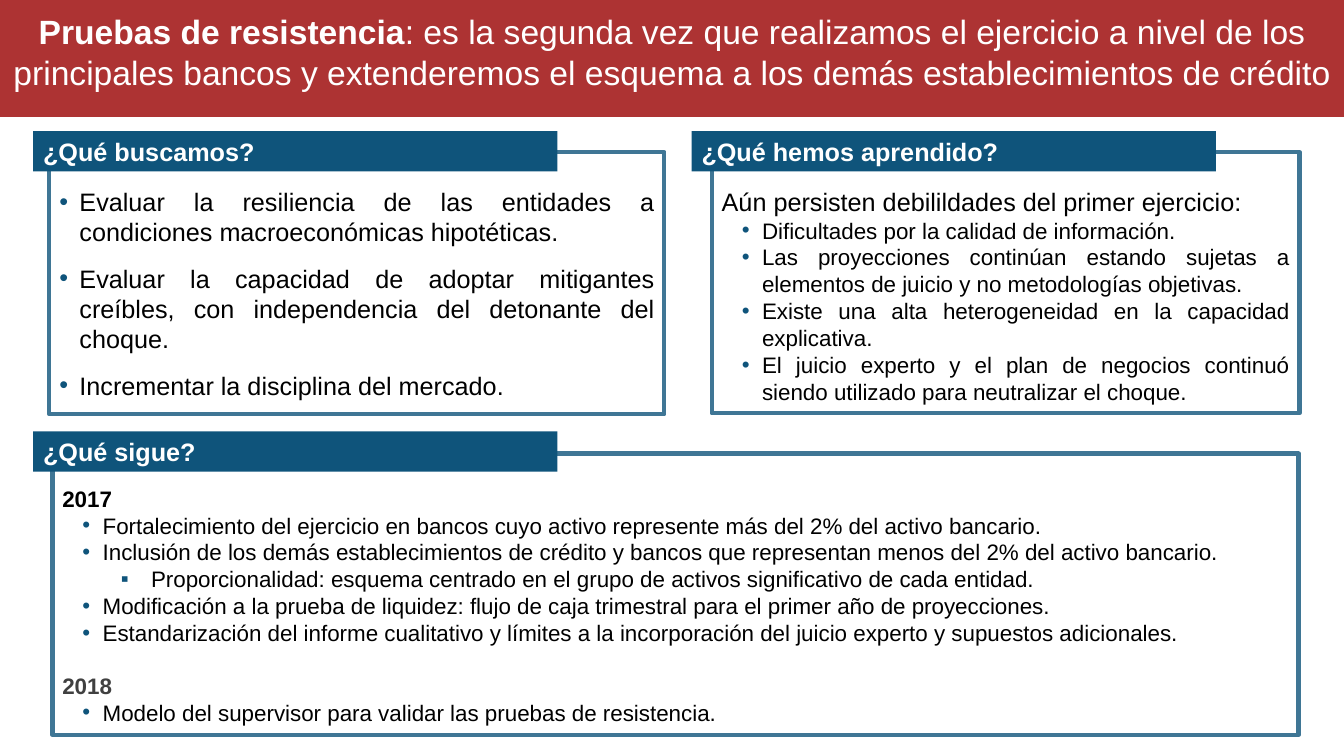
from lxml import etree
from pptx import Presentation
from pptx.dml.color import RGBColor
from pptx.enum import shapes, text
from pptx.oxml import ns
from pptx.util import Inches, Pt

COLORS = {"red": "AD3333", "blue": "0F547B", "border": "3F7695",
          "white": "FFFFFF", "black": "000000", "gray": "404040"}

# Paragraph styles: left margin and hanging indent in inches, sizes in points
STYLES = {
    "goal": {"bullet": "•", "margin": 0.2, "hang": 0.2, "size": 18},
    "intro": {"size": 18},
    "year": {"size": 16, "bold": True},
    "next year": {"size": 16, "bold": True, "color": "gray", "before": 18.4},
    "item": {"bullet": "•", "margin": 0.4, "hang": 0.2, "size": 16},
    "detail": {"bullet": "▪", "margin": 0.88, "hang": 0.3, "size": 16},
}
GOAL_GAP = 11.5

# Each panel: heading, heading position, box position and size, top inset, paragraphs
PANELS = [
    ("¿Qué buscamos?", (0.33, 1.3), (0.49, 1.51, 6.1, 2.6), 0.34, [
        ("goal", "Evaluar la resiliencia de las entidades a condiciones macroeconómicas hipotéticas."),
        ("goal", "Evaluar la capacidad de adoptar mitigantes creíbles, con independencia del detonante del choque."),
        ("goal", "Incrementar la disciplina del mercado."),
    ]),
    ("¿Qué hemos aprendido?", (6.86, 1.3), (7.06, 1.51, 5.83, 2.59), 0.34, [
        ("intro", "Aún persisten debilildades del primer ejercicio:"),
        ("item", "Dificultades por la calidad de información."),
        ("item", "Las proyecciones continúan estando sujetas a elementos de juicio y no metodologías objetivas."),
        ("item", "Existe una alta heterogeneidad en la capacidad explicativa."),
        ("item", "El juicio experto y el plan de negocios continuó siendo utilizado para neutralizar el choque."),
    ]),
    ("¿Qué sigue?", (0.33, 4.28), (0.52, 4.5, 12.36, 2.79), 0.31, [
        ("year", "2017"),
        ("item", "Fortalecimiento del ejercicio en bancos cuyo activo represente más del 2% del activo bancario."),
        ("item", "Inclusión de los demás establecimientos de crédito y bancos que representan menos del 2% del activo bancario."),
        ("detail", "Proporcionalidad: esquema centrado en el grupo de activos significativo de cada entidad."),
        ("item", "Modificación a la prueba de liquidez: flujo de caja trimestral para el primer año de proyecciones."),
        ("item", "Estandarización del informe cualitativo y límites a la incorporación del juicio experto y supuestos adicionales."),
        ("next year", "2018"),
        ("item", "Modelo del supervisor para validar las pruebas de resistencia."),
    ]),
]

presentation = Presentation()
presentation.slide_width = Inches(13.33)
presentation.slide_height = Inches(7.5)
slide = presentation.slides.add_slide(presentation.slide_layouts[6])


def add_box(position, fill=None, line=None):
    shape = slide.shapes.add_shape(shapes.MSO_SHAPE.RECTANGLE, *map(Inches, position))
    shape.shadow.inherit = False
    if fill:
        shape.fill.solid()
        shape.fill.fore_color.rgb = RGBColor.from_string(COLORS[fill])
    else:
        shape.fill.background()
    if line:
        shape.line.color.rgb = RGBColor.from_string(COLORS[line])
        shape.line.width = Pt(3)
    else:
        shape.line.fill.background()
    shape.text_frame.word_wrap = True
    shape.text_frame.vertical_anchor = text.MSO_ANCHOR.TOP
    return shape


def add_run(paragraph, words, size, color, bold=False):
    run = paragraph.add_run()
    run.text = words
    for name, value in {"name": "Arial", "size": Pt(size), "bold": bold}.items():
        setattr(run.font, name, value)
    run.font.color.rgb = RGBColor.from_string(COLORS[color])


add_box((0, -0.02, 13.33, 1.18), fill="red")
title = slide.shapes.add_textbox(0, 0, Inches(13.33), Inches(1.02))
title.text_frame.word_wrap = True
title.text_frame.vertical_anchor = text.MSO_ANCHOR.MIDDLE
paragraph = title.text_frame.paragraphs[0]
paragraph.alignment = text.PP_ALIGN.CENTER
add_run(paragraph, "Pruebas de resistencia", 24, "white", True)
add_run(paragraph, ": es la segunda vez que realizamos el ejercicio a nivel de los principales bancos "
        "y extenderemos el esquema a los demás establecimientos de crédito", 24, "white")

for heading, corner, position, inset, lines in PANELS:
    frame = add_box(position, line="border").text_frame
    frame.margin_top = Inches(inset)
    for index, (kind, words) in enumerate(lines):
        style = STYLES[kind]
        paragraph = frame.add_paragraph() if index else frame.paragraphs[0]
        paragraph.alignment = text.PP_ALIGN.JUSTIFY
        if "bullet" in style:
            properties = paragraph._p.get_or_add_pPr()
            properties.set("marL", str(Inches(style["margin"])))
            properties.set("indent", str(-Inches(style["hang"])))
            bullet_color = etree.SubElement(properties, ns.qn("a:buClr"))
            etree.SubElement(bullet_color, ns.qn("a:srgbClr"), val=COLORS["blue"])
            etree.SubElement(properties, ns.qn("a:buFont"), typeface="Arial")
            etree.SubElement(properties, ns.qn("a:buChar"), char=style["bullet"])
        gap = GOAL_GAP if kind == "goal" else style.get("before", 0)
        if index and gap:
            paragraph.space_before = Pt(gap)
        add_run(paragraph, words, style["size"], style.get("color", "black"), style.get("bold", False))

    paragraph = add_box((*corner, 5.2, 0.4), fill="blue").text_frame.paragraphs[0]
    paragraph.alignment = text.PP_ALIGN.LEFT
    add_run(paragraph, heading, 18, "white", True)

presentation.save("out.pptx")
